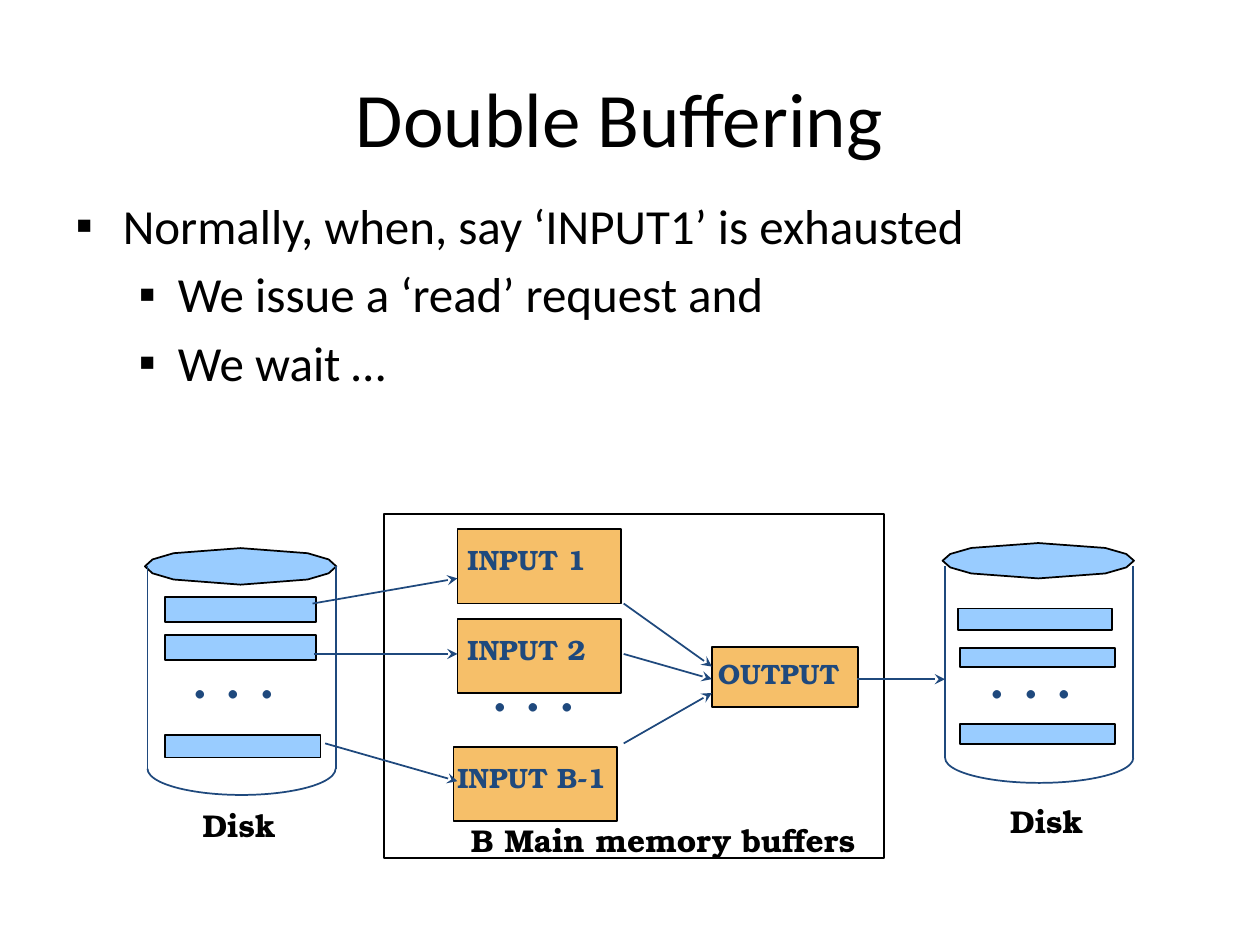
from lxml.etree import SubElement
from pptx import Presentation
from pptx.dml.color import RGBColor
from pptx.enum.shapes import MSO_CONNECTOR as Link, MSO_SHAPE as Kind
from pptx.enum.text import MSO_ANCHOR as Anchor, MSO_AUTO_SIZE as Fit, PP_ALIGN as Align
from pptx.oxml.ns import qn
from pptx.util import Pt

BLACK, NAVY, BLUE, GOLD = "000000", "1F497D", "99CCFF", "F6BF69"
SANS, SERIF = "Calibri", "TeX Gyre Bonum"


def paint(part, tone):
    """Set a solid colour on a fill."""
    part.solid()
    part.fore_color.rgb = RGBColor.from_string(tone)


def style(shape, fill, edge):
    """Give a shape its fill, thin outline and no shadow."""
    shape.shadow.inherit = False
    if fill:
        paint(shape.fill, fill)
    else:
        shape.fill.background()
    paint(shape.line.fill, edge)
    shape.line.width = Pt(1)


def write(para, text, size, font, tone, bold=False):
    """Add one formatted run to a paragraph."""
    run = para.add_run()
    run.text = text
    run.font.size = Pt(size)
    run.font.name = font
    run.font.bold = bold
    paint(run.font.fill, tone)


def place(shape, *box):
    """Move a shape to a box given in points."""
    shape.left, shape.top, shape.width, shape.height = map(Pt, box)


def head(slide, text):
    """Fill the title placeholder."""
    title = slide.shapes.title
    place(title, 0, 21.6, 708, 90)
    title.text_frame.vertical_anchor = Anchor.MIDDLE
    para = title.text_frame.paragraphs[0]
    para.alignment = Align.CENTER
    write(para, text, 44, SANS, BLACK)


def points(slide, items):
    """Fill the body placeholder with bulleted level and text pairs."""
    body = slide.placeholders[1]
    place(body, 36, 108, 672, 408)
    frame = body.text_frame
    frame.auto_size = Fit.NONE
    for i, (level, text) in enumerate(items):
        para = frame.add_paragraph() if i else frame.paragraphs[0]
        para.level = level
        SubElement(para._p.get_or_add_pPr(), qn("a:buChar")).set("char", "▪")
        write(para, text, 28, SANS, BLACK)


def label(slide, text, box, size, font, tone, bold=True, wrap=False):
    """Add a free text label."""
    frame = slide.shapes.add_textbox(*map(Pt, box)).text_frame
    frame.word_wrap = wrap
    write(frame.paragraphs[0], text, size, font, tone, bold)


def dots(slide, x, y):
    """Add an ellipsis between stacked blocks."""
    label(slide, ". . .", (x, y, 64.8, 54.7), 40, SANS, NAVY, False)


def block(slide, box, fill=None):
    """Add an outlined rectangle."""
    style(slide.shapes.add_shape(Kind.RECTANGLE, *map(Pt, box)), fill, BLACK)


def line(slide, ends, arrow=False):
    """Add a straight line, with an arrowhead if wanted."""
    link = slide.shapes.add_connector(Link.STRAIGHT, *map(Pt, ends))
    paint(link.line.fill, NAVY)
    link.line.width = Pt(1)
    if arrow:
        SubElement(link.line._get_or_add_ln(), qn("a:tailEnd")).set("type", "stealth")
    SubElement(link._element.spPr, qn("a:effectLst"))


def lid(slide, x, y, wide, high):
    """Draw the twelve-sided lid of a disk."""
    arc = [(1, 0), (.92, .38), (.7, .72), (0, 1), (-.7, .72), (-.92, .38)]
    ring = arc + [(-a, -b) for a, b in arc]
    dots = [(Pt(x + wide * (1 + a) / 2), Pt(y + high * (1 + b) / 2)) for a, b in ring]
    path = slide.shapes.build_freeform(*dots[0])
    path.add_line_segments(dots[1:])
    style(path.convert_to_shape(), BLUE, BLACK)


def disk(slide, x, y, high, foot, deep, name):
    """Draw a disk: lid, sides, curved base and caption."""
    wide = 107.5
    lid(slide, x, y, 109.4, high)
    left = x + 1.5
    for side in (left, left + wide):
        line(slide, (side, 323.3, side, foot))
    box = map(Pt, (left, foot - deep, wide, 2 * deep))
    base = slide.shapes.add_shape(Kind.ARC, *box)
    base.adjustments[0] = 0
    base.adjustments[1] = 108
    style(base, None, NAVY)
    label(slide, "Disk", name + (56.2, 28.8), 18, SERIF, BLACK)


def main():
    """Build the slide and save it."""
    deck = Presentation()
    deck.slide_width, deck.slide_height = Pt(720), Pt(540)
    slide = deck.slides.add_slide(deck.slide_layouts[1])
    head(slide, "Double Buffering")
    points(slide, [
        (0, "Normally, when, say ‘INPUT1’ is exhausted"),
        (1, "We issue a ‘read’ request and"),
        (1, "We wait …"),
    ])

    block(slide, (219.6, 293.8, 285.6, 196.6))
    label(slide, "B Main memory buffers", (262, 465.8, 241.2, 28.8),
          18, SERIF, BLACK, wrap=True)
    disk(slide, 82.8, 313.2, 20.9, 439.3, 15, (108.7, 457.2))
    disk(slide, 538.6, 310.3, 20.2, 433.2, 14.2, (570.2, 455))

    pages = [
        (94.3, 341.3, 86.4, 14.2), (94.3, 362.9, 86.4, 14.2),
        (94.3, 419.8, 88.8, 13),
        (547.4, 347.8, 88, 12.2), (548.6, 370.1, 88.4, 11.2),
        (548.6, 413.8, 88.4, 11.2),
    ]
    for box in pages:
        block(slide, box, BLUE)

    bufs = [
        ("INPUT 1", (261.4, 302.4, 93.6, 42.5), (260, 306.7, 82, 26)),
        ("INPUT 2", (261.4, 353.5, 93.6, 42.5), (260, 357.8, 82, 26)),
        ("INPUT B-1", (259.2, 426.7, 93.6, 42.5), (254.2, 431.3, 99.4, 26)),
        ("OUTPUT", (406.8, 369.8, 83.5, 34.3), (403.2, 371.5, 83.5, 26)),
    ]
    for text, box, spot in bufs:
        block(slide, box, GOLD)
        label(slide, text, spot, 16, SERIF, NAVY)

    for x, y in [(102.2, 355.7), (273.6, 362.9), (558, 355.7)]:
        dots(slide, x, y)

    flows = [
        (178.6, 344.9, 261.4, 330.5), (179.3, 373.7, 261.4, 373.7),
        (185.8, 424.8, 261.4, 446.4), (356.4, 344.9, 406.8, 380.9),
        (356.4, 373.7, 406.8, 388.1), (356.4, 424.8, 406.8, 396),
        (489.6, 388.1, 540, 388.1),
    ]
    for ends in flows:
        line(slide, ends, True)
    deck.save("out.pptx")


if __name__ == "__main__":
    main()
